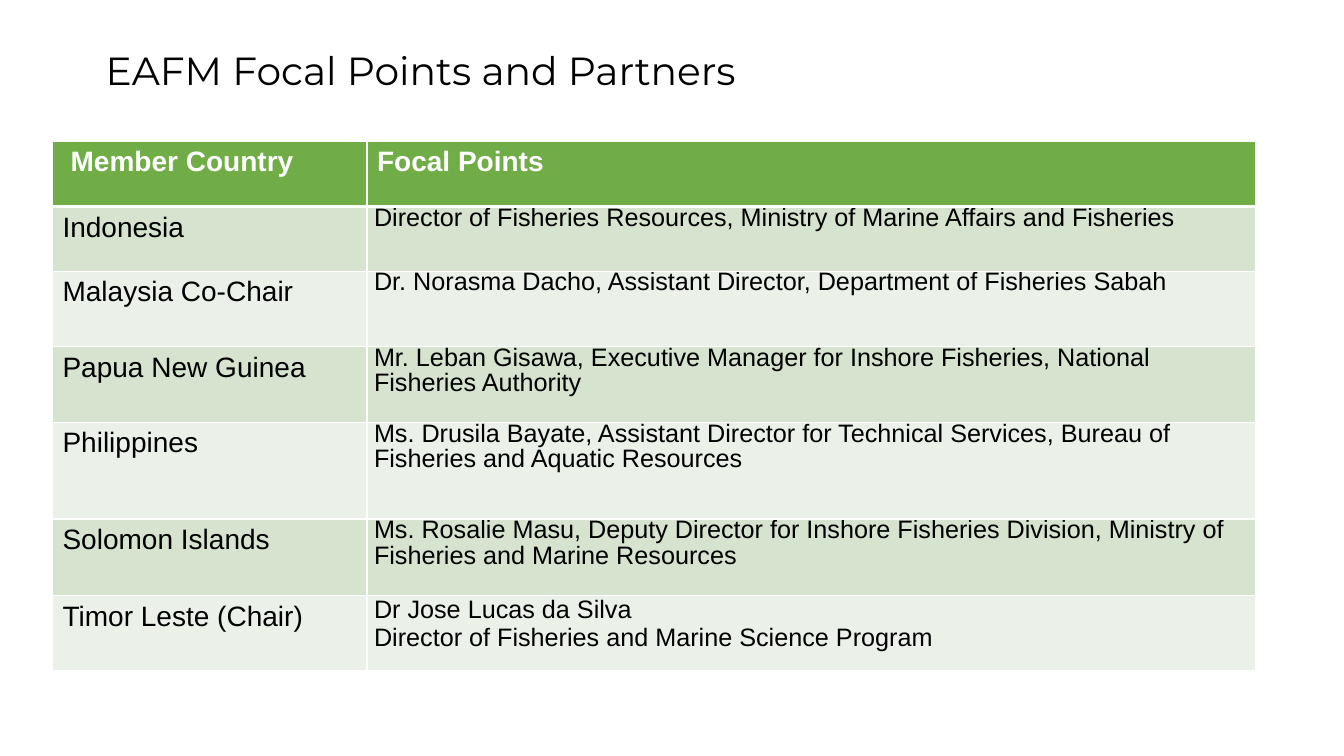
from lxml.etree import SubElement
from pptx import Presentation
from pptx.dml.color import RGBColor
from pptx.enum.text import MSO_ANCHOR
from pptx.oxml.ns import qn
from pptx.util import Inches, Pt

HEADER_GREEN, BAND_DARK, BAND_LIGHT = "70AD47", "D5E3CF", "EBF1E9"
WHITE, BLACK = "FFFFFF", "000000"


def color(value):
    return RGBColor.from_string(value)


def write(frame, text, size=20, font="Arial", ink=BLACK, bold=False,
          line_spacing=None, space_after=None):
    frame.word_wrap = True
    for index, line in enumerate(text.split("\n")):
        paragraph = frame.add_paragraph() if index else frame.paragraphs[0]
        paragraph.line_spacing = line_spacing
        paragraph.space_after = space_after
        run = paragraph.add_run()
        run.text = line
        run.font.size = Pt(size)
        run.font.name = font
        run.font.bold = bold
        run.font.color.rgb = color(ink)


deck = Presentation()
deck.slide_width, deck.slide_height = Inches(13.33), Inches(7.5)
slide = deck.slides.add_slide(deck.slide_layouts[6])

title = slide.shapes.add_textbox(Inches(0.95), Inches(0.42), Inches(11.5), Inches(0.61)).text_frame
title.vertical_anchor = MSO_ANCHOR.MIDDLE
write(title, "EAFM Focal Points and Partners", size=28, font="Montserrat", line_spacing=0.9)

members = [
    ("Member Country", "Focal Points", 0.65),
    ("Indonesia", "Director of Fisheries Resources, Ministry of Marine Affairs and Fisheries", 0.64),
    ("Malaysia Co-Chair", "Dr. Norasma Dacho, Assistant Director, Department of Fisheries Sabah", 0.75),
    ("Papua New Guinea", "Mr. Leban Gisawa, Executive Manager for Inshore Fisheries, National Fisheries Authority", 0.75),
    ("Philippines", "Ms. Drusila Bayate, Assistant Director for Technical Services, Bureau of Fisheries and Aquatic Resources", 0.96),
    ("Solomon Islands", "Ms. Rosalie Masu, Deputy Director for Inshore Fisheries Division, Ministry of Fisheries and Marine Resources", 0.76),
    ("Timor Leste (Chair)", "Dr Jose Lucas da Silva\nDirector of Fisheries and Marine Science Program", 0.74),
]
column_widths = [3.12, 8.81]

directory = slide.shapes.add_table(
    len(members), len(column_widths), Inches(0.52), Inches(1.4),
    Inches(sum(column_widths)), Inches(sum(height for *_, height in members))).table
for column, width in zip(directory.columns, column_widths):
    column.width = Inches(width)

for row, (*texts, height) in enumerate(members):
    directory.rows[row].height = Inches(height)
    for column, text in enumerate(texts):
        cell = directory.cell(row, column)
        widths = {"lnL": 1, "lnR": 1, "lnT": 3 if row == 1 else 1, "lnB": 3 if row == 0 else 1}
        for side, points in widths.items():
            border = SubElement(cell._tc.get_or_add_tcPr(), qn(f"a:{side}"), w=str(Pt(points)))
            SubElement(SubElement(border, qn("a:solidFill")), qn("a:srgbClr"), val=WHITE)
        cell.fill.solid()
        if row == 0:
            cell.fill.fore_color.rgb = color(HEADER_GREEN)
            if column == 0:
                cell.margin_left = Inches(0.18)
            write(cell.text_frame, text, ink=WHITE, bold=True)
            continue
        cell.fill.fore_color.rgb = color(BAND_DARK if row % 2 else BAND_LIGHT)
        if column == 0:
            write(cell.text_frame, text)
            continue
        cell.margin_left = cell.margin_right = Inches(0.07)
        cell.margin_top = cell.margin_bottom = 0
        if "\n" in text:
            write(cell.text_frame, text, size=18)
        else:
            write(cell.text_frame, text, size=18, line_spacing=Pt(18), space_after=Pt(12))

deck.save("out.pptx")
